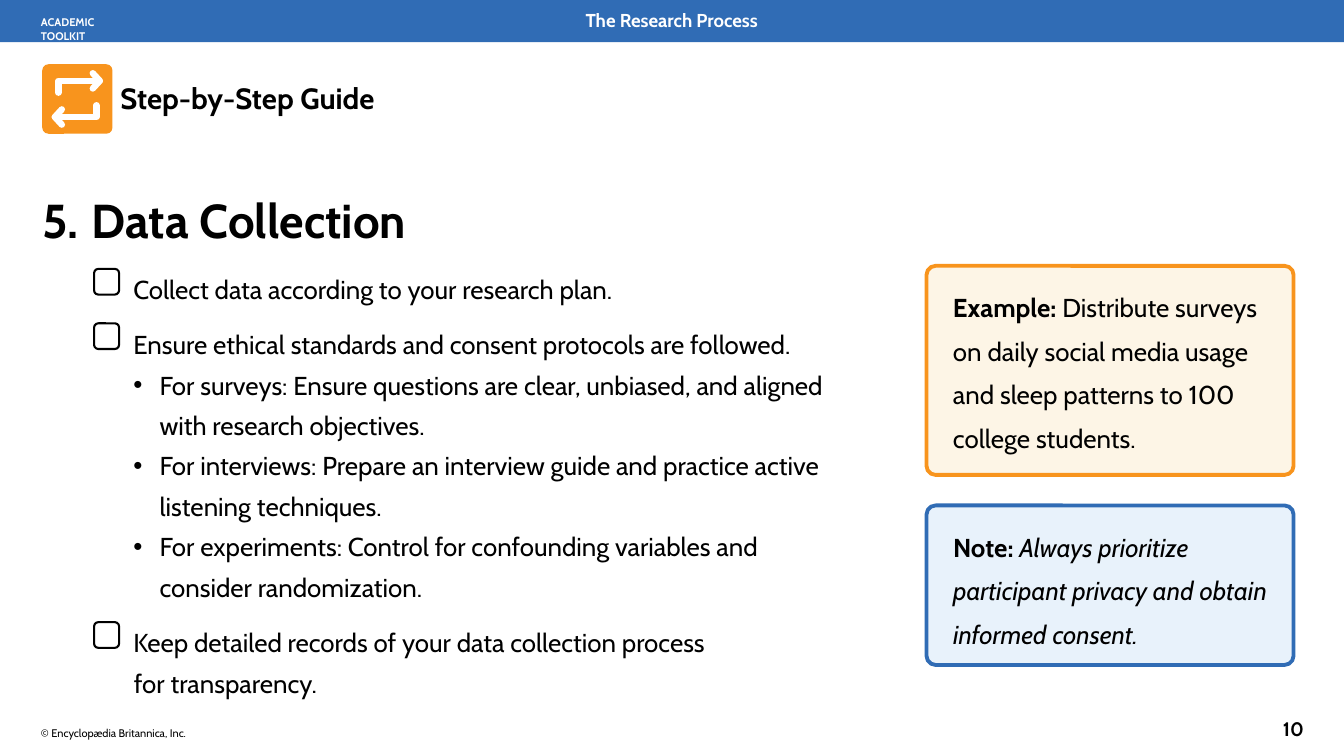
from lxml import etree
from pptx import Presentation
from pptx.dml.color import RGBColor
from pptx.enum.shapes import MSO_SHAPE
from pptx.enum.text import MSO_ANCHOR, MSO_AUTO_SIZE, PP_ALIGN
from pptx.oxml.ns import qn
from pptx.util import Inches, Pt

LEFT, CENTER = PP_ALIGN.LEFT, PP_ALIGN.CENTER
TOP = MSO_ANCHOR.TOP
FIXED_SIZE = MSO_AUTO_SIZE.NONE
RECTANGLE, ROUNDED = MSO_SHAPE.RECTANGLE, MSO_SHAPE.ROUNDED_RECTANGLE

WIDTH, HEIGHT = Inches(21.99), Inches(12.37)
FONT = "Cabin"
BLACK, WHITE = "000000", "FFFFFF"
BLUE, ORANGE = "306CB5", "F8941D"
PALE_BLUE, CREAM = "E8F2FB", "FDF5E6"
MARGIN = 3.05
BODY_SIZE = 30.5

CHECK, BULLET = "check", "bullet"
INDENTS = {CHECK: (1.52, -0.01), BULLET: (1.94, -0.43)}
STEPS = [
    (CHECK, "Collect data according to your research plan."),
    (CHECK, "Ensure ethical standards and consent protocols are followed."),
    (BULLET, "For surveys: Ensure questions are clear, unbiased, and aligned\vwith research objectives."),
    (BULLET, "For interviews: Prepare an interview guide and practice active\vlistening techniques."),
    (BULLET, "For experiments: Control for confounding variables and\vconsider randomization."),
    (CHECK, "Keep detailed records of your data collection process\vfor transparency."),
]
CHECKBOX_TOPS = [35.57, 42.77, 82.3]
# Shares of the icon's width and height
ARROW_SHAFT = [(0.23, 0.41), (0.23, 0.24), (0.82, 0.24)]
ARROW_HEAD = [(0.72, 0.13), (0.82, 0.24), (0.72, 0.35)]


def color(hex_value):
    return RGBColor.from_string(hex_value)


def place(left, top, width, height):
    """Turn percentages of the slide's size into lengths."""
    return (int(WIDTH * left / 100), int(HEIGHT * top / 100),
            int(WIDTH * width / 100), int(HEIGHT * height / 100))


def style_font(para, size, bold=None, fill=BLACK):
    font = para.font
    font.name, font.size, font.bold = FONT, Pt(size), bold
    font.color.rgb = color(fill)


def prepare_frame(frame, insets=(0, 0, 0, 0)):
    frame.word_wrap = True
    frame.auto_size = FIXED_SIZE
    frame.vertical_anchor = TOP
    (frame.margin_left, frame.margin_top,
     frame.margin_right, frame.margin_bottom) = [Inches(inset) for inset in insets]


def set_marker(para, indent, tag, **attributes):
    """Give a paragraph its hanging indent and its bullet element."""
    properties = para._p.get_or_add_pPr()
    margin, first_line = indent
    properties.set("marL", str(Inches(margin)))
    properties.set("indent", str(Inches(first_line)))
    marker = etree.SubElement(properties, qn(tag))
    for name, value in attributes.items():
        marker.set(name, value)


def add_label(page, area, text, size, bold=True, fill=BLACK, align=LEFT):
    frame = page.shapes.add_textbox(*place(*area)).text_frame
    prepare_frame(frame)
    para = frame.paragraphs[0]
    para.text, para.alignment = text, align
    style_font(para, size, bold, fill)


def add_panel(page, kind, area, fill=None, line=None, line_width=1, corner=None):
    panel = page.shapes.add_shape(kind, *place(*area))
    panel.shadow.inherit = False
    if corner is not None:
        panel.adjustments[0] = corner
    if fill:
        panel.fill.solid()
        panel.fill.fore_color.rgb = color(fill)
    else:
        panel.fill.background()
    if line:
        panel.line.color.rgb = color(line)
        panel.line.width = Pt(line_width)
    else:
        panel.line.fill.background()
    return panel


def add_callout(page, area, fill, line, corner, lead, message, italic=False):
    panel = add_panel(page, ROUNDED, area, fill, line, 4.5, corner)
    prepare_frame(panel.text_frame, (0.39, 0.18, 0.23, 0))
    para = panel.text_frame.paragraphs[0]
    para.alignment, para.line_spacing = LEFT, 1.4
    style_font(para, BODY_SIZE)
    for text, is_lead in ((lead, True), (message, False)):
        span = para.add_run()
        span.text = text
        span.font.bold = is_lead
        span.font.italic = italic and not is_lead


def add_stroke(page, points):
    """Draw an open white line with round ends and corners."""
    builder = page.shapes.build_freeform(*points[0])
    builder.add_line_segments(points[1:], close=False)
    stroke = builder.convert_to_shape()
    stroke.shadow.inherit = False
    stroke.fill.background()
    stroke.line.color.rgb = color(WHITE)
    stroke.line.width = Pt(7.5)
    outline = stroke.line._get_or_add_ln()
    outline.set("cap", "rnd")
    etree.SubElement(outline, qn("a:round"))


def add_cycle_icon(page):
    square = add_panel(page, ROUNDED, (3.14, 8.49, 5.23, 9.2), ORANGE, corner=0.09)
    for turned in (False, True):
        for shares in (ARROW_SHAFT, ARROW_HEAD):
            if turned:
                shares = [(1 - across, 1 - down) for across, down in shares]
            add_stroke(page, [(int(square.left + square.width * across),
                               int(square.top + square.height * down))
                              for across, down in shares])


def fill_title(title):
    title.left, title.top, title.width, title.height = place(MARGIN, 25.22, 62.07, 7.7)
    prepare_frame(title.text_frame)
    para = title.text_frame.paragraphs[0]
    para.text, para.alignment = "Data Collection", LEFT
    set_marker(para, (0.83, -0.81), "a:buAutoNum", type="arabicPeriod", startAt="5")
    style_font(para, 56, True)


def fill_steps(body):
    body.left, body.top, body.width, body.height = place(MARGIN, 34.92, 62.07, 57.2)
    frame = body.text_frame
    prepare_frame(frame)
    for index, (kind, text) in enumerate(STEPS):
        para = frame.add_paragraph() if index else frame.paragraphs[0]
        para.text = text
        if kind == BULLET:
            set_marker(para, INDENTS[kind], "a:buChar", char="•")
        else:
            set_marker(para, INDENTS[kind], "a:buNone")
        para.line_spacing = 1.3
        para.space_before = Pt(18 if index and kind == CHECK else 0)
        style_font(para, BODY_SIZE)


def main():
    deck = Presentation()
    deck.slide_width, deck.slide_height = WIDTH, HEIGHT
    page = deck.slides.add_slide(deck.slide_layouts[1])

    add_panel(page, RECTANGLE, (0, 0, 100, 5.58), BLUE)
    add_label(page, (34.06, 1.21, 31.83, 2.99), "The Research Process", 22,
              fill=WHITE, align=CENTER)
    add_label(page, (MARGIN, 2.1, 6.37, 3.56), "ACADEMIC TOOLKIT", 13, fill=WHITE)

    add_cycle_icon(page)
    add_label(page, (8.96, 10.67, 27.3, 5.1), "Step-by-Step Guide", 34.5)

    fill_title(page.shapes.title)
    fill_steps(page.placeholders[1])
    for top in CHECKBOX_TOPS:
        add_panel(page, ROUNDED, (7, top, 1.86, 3.4), line=BLACK, line_width=2.47, corner=0.17)

    add_callout(page, (68.94, 35.17, 27.31, 27.65), CREAM, ORANGE, 0.043, "Example: ",
                "Distribute surveys on daily social media usage and sleep patterns "
                "to 100 college students.")
    add_callout(page, (68.94, 66.86, 27.31, 21.1), PALE_BLUE, BLUE, 0.057, "Note: ",
                "Always prioritize participant privacy and obtain informed consent.",
                italic=True)

    add_label(page, (MARGIN, 96.04, 14, 2.02), "© Encyclopædia Britannica, Inc.", 13, bold=False)
    add_label(page, (95.45, 94.83, 2.27, 3.31), "10", 23)
    deck.save("out.pptx")


if __name__ == "__main__":
    main()
